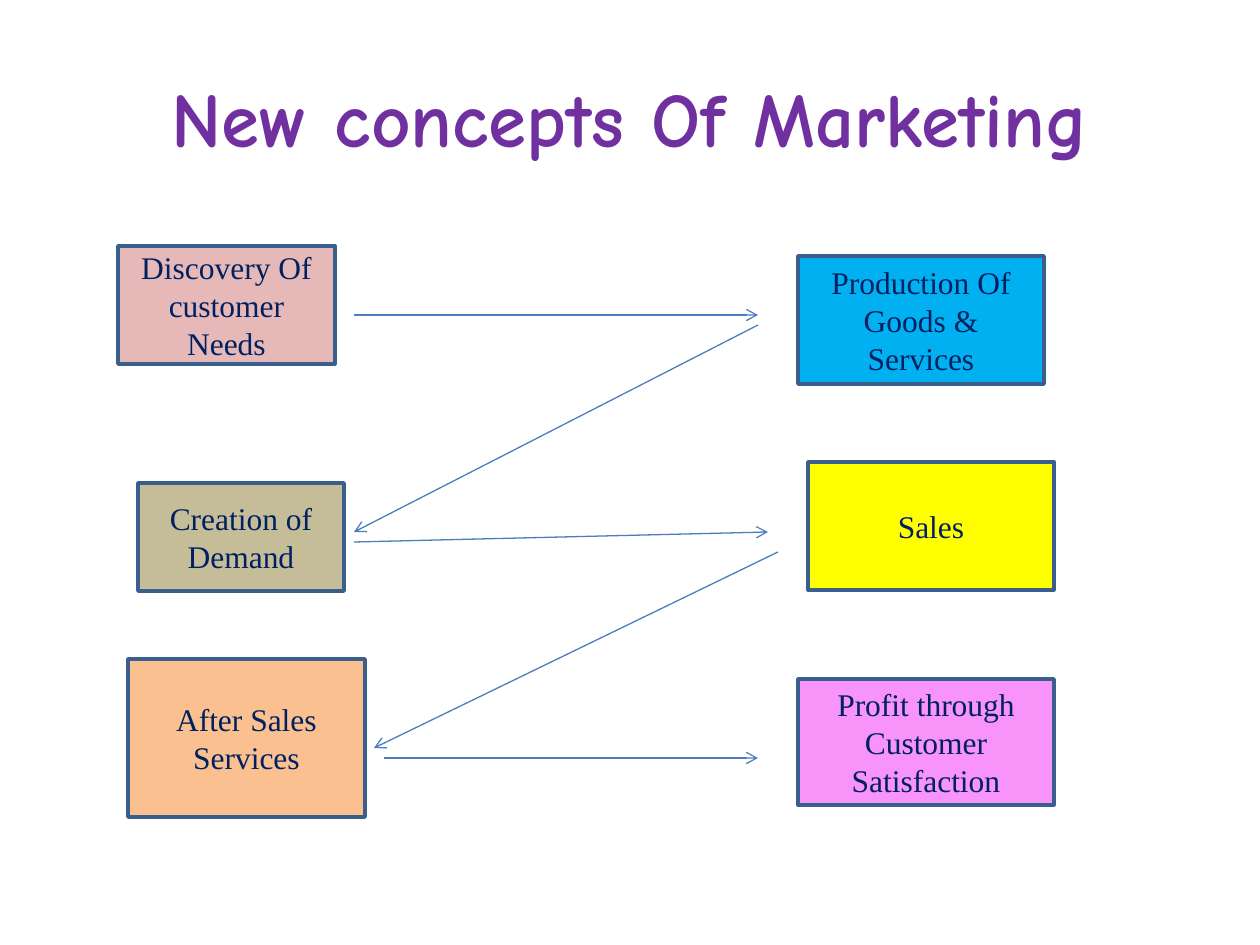
"""Build the slide on the new concepts of marketing."""
from lxml.etree import SubElement
from pptx import Presentation
from pptx.dml.color import RGBColor
from pptx.enum.shapes import MSO_CONNECTOR, MSO_SHAPE as SHAPE
from pptx.enum.text import MSO_ANCHOR, PP_ALIGN
from pptx.oxml.ns import qn
from pptx.util import Emu, Pt

PX_PER_INCH = 126
STEPS = [
    ("Discovery Of customer Needs", (118, 246, 217, 118), SHAPE.RECTANGLE, "E6B9B8"),
    ("Production Of Goods & Services", (798, 256, 246, 128), SHAPE.FLOWCHART_PROCESS, "00B0F0"),
    ("Creation of Demand", (138, 483, 206, 108), SHAPE.RECTANGLE, "C4BD97"),
    ("Sales", (808, 462, 246, 128), SHAPE.RECTANGLE, "FFFF00"),
    ("After Sales Services", (128, 659, 237, 158), SHAPE.FLOWCHART_PROCESS, "FAC090"),
    ("Profit through Customer Satisfaction", (798, 679, 256, 126), SHAPE.RECTANGLE, "F793F9"),
]
ARROWS = [
    (354, 315, 758, 315),
    (758, 325, 354, 532),
    (354, 542, 768, 532),
    (778, 552, 374, 748),
    (384, 758, 758, 758),
]


def px(n):
    return Emu(round(n * 914400 / PX_PER_INCH))


def rgb(value):
    return RGBColor.from_string(value)


def write(shape, text, font, size, color, bold=False):
    tf = shape.text_frame
    tf.word_wrap = True
    tf.vertical_anchor = MSO_ANCHOR.MIDDLE
    p = tf.paragraphs[0]
    p.text = text
    p.alignment = PP_ALIGN.CENTER
    p.font.name = font
    p.font.size = Pt(size)
    p.font.bold = bold
    p.font.color.rgb = rgb(color)


def add_title(s, text):
    box = s.shapes.add_textbox(*map(px, (63, 38, 1134, 157)))
    write(box, text, "Comic Neue", 44, "7030A0", bold=True)


def add_step(s, text, box, kind, fill):
    sp = s.shapes.add_shape(kind, *map(px, box))
    sp.shadow.inherit = False
    sp.fill.solid()
    sp.fill.fore_color.rgb = rgb(fill)
    sp.line.color.rgb = rgb("3A5F8C")
    sp.line.width = Pt(2)
    write(sp, text, "Times New Roman", 18, "002060")


def add_arrow(s, ends):
    line = s.shapes.add_connector(MSO_CONNECTOR.STRAIGHT, *map(px, ends))
    line.line.color.rgb = rgb("4B7EBC")
    line.line.width = Pt(0.75)
    SubElement(line.line._get_or_add_ln(), qn("a:tailEnd"), type="arrow")
    SubElement(line._element.spPr, qn("a:effectLst"))


def main():
    prs = Presentation()
    prs.slide_width, prs.slide_height = px(1260), px(945)
    s = prs.slides.add_slide(prs.slide_layouts[6])
    add_title(s, "New concepts Of Marketing")
    for step in STEPS:
        add_step(s, *step)
    for ends in ARROWS:
        add_arrow(s, ends)
    prs.save("out.pptx")


if __name__ == "__main__":
    main()
